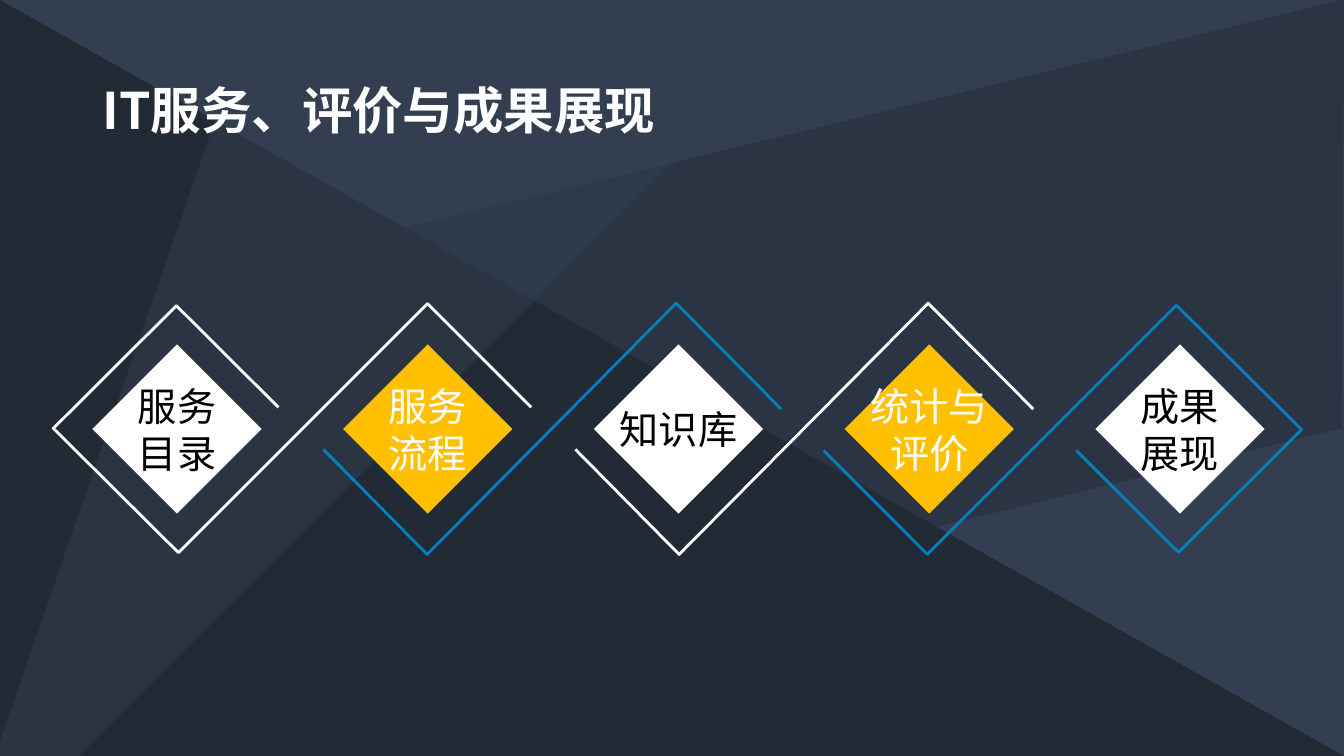
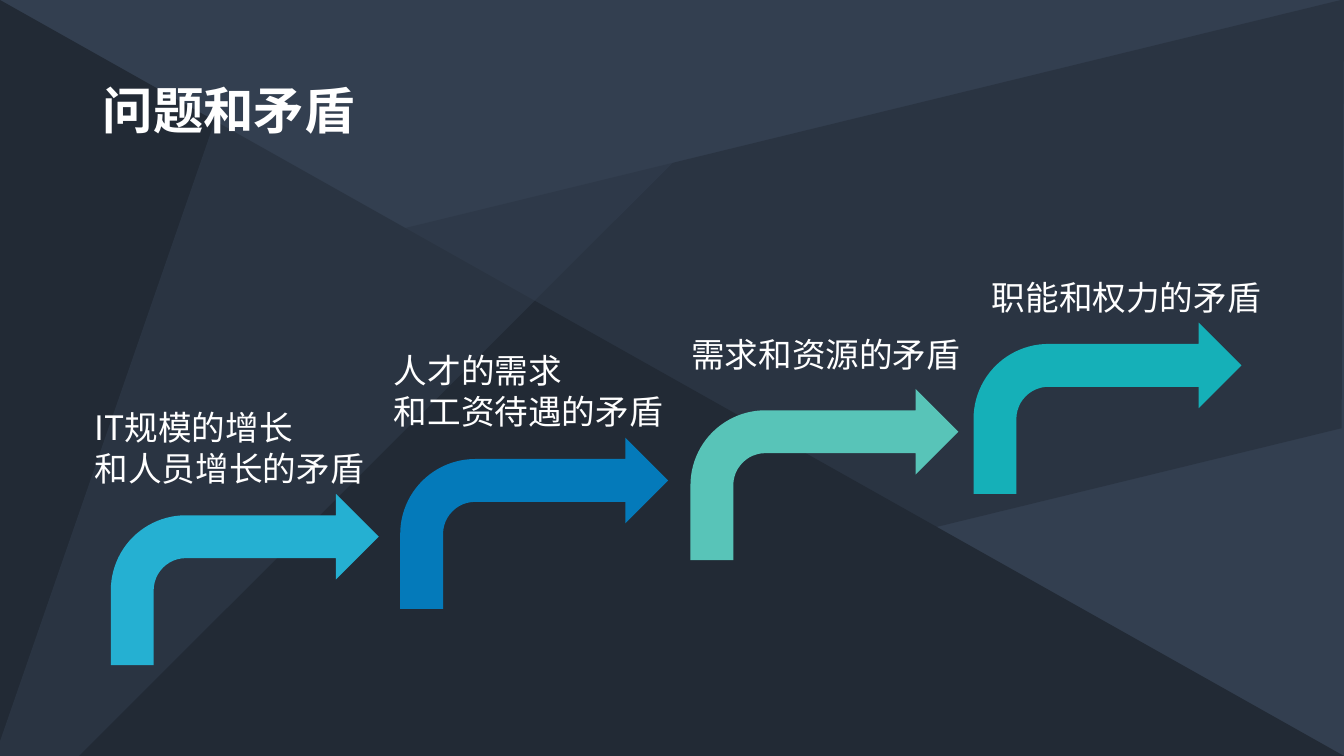
"""Build two dark slides on a grid of 32 columns by 18 rows."""
import dataclasses

import lxml.etree
import pptx
import pptx.dml.color
import pptx.enum.shapes
import pptx.enum.text
import pptx.oxml.ns
import pptx.util

SHAPE = pptx.enum.shapes.MSO_SHAPE
ALIGN = pptx.enum.text.PP_ALIGN
ANCHOR = pptx.enum.text.MSO_ANCHOR


@dataclasses.dataclass(frozen=True)
class Theme:
    font: str = "Noto Sans CJK SC"
    slate: str = "333F50"
    night: str = "222A35"
    white: str = "FFFFFF"
    black: str = "000000"
    gold: str = "FFC000"
    blue: str = "077FBF"
    steps: tuple = ("25B0D2", "047ABA", "58C4B8", "15B0B8")
    head: int = 36
    node: int = 28
    label: int = 24
    line: int = 2


def rgb(code):
    return pptx.dml.color.RGBColor.from_string(code)


def write(shape, text, font, size, color, bold=False, align=ALIGN.LEFT,
          anchor=ANCHOR.MIDDLE, wrap=False, space=None, inset=None):
    frame = shape.text_frame
    frame.word_wrap = wrap
    frame.vertical_anchor = anchor
    if inset is not None:
        frame.margin_left = frame.margin_right = inset
        frame.margin_top = frame.margin_bottom = inset
    for i, line in enumerate(text.split("\n")):
        para = frame.add_paragraph() if i else frame.paragraphs[0]
        para.alignment = align
        para.line_spacing = space
        run = para.add_run()
        run.text = line
        run.font.size = pptx.util.Pt(size)
        run.font.bold = bold
        run.font.color.rgb = rgb(color)
        run.font.name = font
        east = lxml.etree.SubElement(run._r.get_or_add_rPr(), pptx.oxml.ns.qn("a:ea"))
        east.set("typeface", font)


class Deck:
    def __init__(self, theme):
        self.theme = theme
        self.show = pptx.Presentation()
        self.show.slide_width = pptx.util.Inches(13.33)
        self.show.slide_height = pptx.util.Inches(7.5)
        self.col = self.show.slide_width / 32
        self.row = self.show.slide_height / 18
        self.slide = None

    def point(self, x, y):
        return round(x * self.col), round(y * self.row)

    def start(self, title):
        look = self.theme
        self.slide = self.show.slides.add_slide(self.show.slide_layouts[6])
        fill = self.slide.background.fill
        fill.solid()
        fill.fore_color.rgb = rgb(look.slate)
        self.block(SHAPE.ISOSCELES_TRIANGLE, 0, 0, 32, 18, look.night, adjust=0)
        self.block(SHAPE.PARALLELOGRAM, -1.7, 4.03, 35.38, 9.91, look.night,
                   turn=346.3, alpha=50)
        self.block(SHAPE.ISOSCELES_TRIANGLE, 2.83, -2.78, 12.98, 26.69, look.slate,
                   turn=199.1, alpha=50, adjust=1)
        self.text(title, 2.21, 0.96, 27.6, 3.48, size=look.head,
                  bold=True, wrap=True, space=0.9)

    def block(self, kind, x, y, w, h, color, turn=0, alpha=100, adjust=None):
        shape = self.slide.shapes.add_shape(kind, *self.point(x, y), *self.point(w, h))
        shape.shadow.inherit = False
        shape.rotation = turn
        if adjust is not None:
            shape.adjustments[0] = adjust
        shape.line.fill.background()
        shape.fill.solid()
        shape.fill.fore_color.rgb = rgb(color)
        if alpha < 100:
            tone = shape._element.spPr.find(".//" + pptx.oxml.ns.qn("a:srgbClr"))
            lxml.etree.SubElement(tone, pptx.oxml.ns.qn("a:alpha")).set("val", str(alpha * 1000))
        return shape

    def text(self, words, x, y, w, h, **form):
        box = self.slide.shapes.add_textbox(*self.point(x, y), *self.point(w, h))
        write(box, words, self.theme.font, color=self.theme.white, **form)

    def node(self, words, x, y, size, fill, ink):
        shape = self.block(SHAPE.DIAMOND, x, y, size, size, fill)
        write(shape, words, self.theme.font, self.theme.node, ink,
              align=ALIGN.CENTER, inset=0)

    def ribbon(self, x, y, steps, color, sign=1):
        spots = [self.point(x + sign * dx, y + sign * dy) for dx, dy in steps]
        maker = self.slide.shapes.build_freeform(*spots[0])
        maker.add_line_segments(spots[1:], close=False)
        shape = maker.convert_to_shape()
        shape.shadow.inherit = False
        shape.fill.background()
        shape.line.color.rgb = rgb(color)
        shape.line.width = pptx.util.Pt(self.theme.line)


def service(deck):
    look = deck.theme
    deck.start("IT服务、评价与成果展现")
    wave = [(0, 0), (2.47, 2.5), (8.4, -3.48), (10.9, -0.96)]
    loop = [(0, 0), (2.47, 2.47), (8.4, -3.46), (11.38, -0.5), (8.45, 2.42), (6.02, 0)]
    deck.ribbon(12.65, 9.7, loop, look.white, sign=-1)
    deck.ribbon(7.7, 10.7, wave, look.blue)
    deck.ribbon(13.7, 10.7, wave, look.white)
    deck.ribbon(19.61, 10.73, loop, look.blue)
    names = ["服务\n目录", "服务\n流程", "知识库", "统计与\n评价", "成果\n展现"]
    for i, name in enumerate(names):
        fill, ink = (look.gold, look.white) if i % 2 else (look.white, look.black)
        deck.node(name, 2.2 + 5.97 * i, 8.2, 4.03, fill, ink)


def issues(deck):
    look = deck.theme
    deck.start("问题和矛盾")
    stairs = [
        ("IT规模的增长\n和人员增长的矛盾", 2.02, 2.64, 11.76),
        ("人才的需求\n和工资待遇的矛盾", 9.14, 9.53, 10.42),
        ("需求和资源的矛盾", 16.22, 16.44, 9.26),
        ("职能和权力的矛盾", 23.38, 23.18, 7.68),
    ]
    for i, (words, left, x, y) in enumerate(stairs):
        deck.block(SHAPE.BENT_ARROW, x, y, 6.38, 4.08, look.steps[i])
        tall = 2.18 if "\n" in words else 1.2
        base = 11.76 - 1.36 * i
        deck.text(words, left, base - tall, 6.94, tall, size=look.label, anchor=ANCHOR.TOP)


def main():
    deck = Deck(Theme())
    service(deck)
    issues(deck)
    deck.show.save("out.pptx")


if __name__ == "__main__":
    main()
